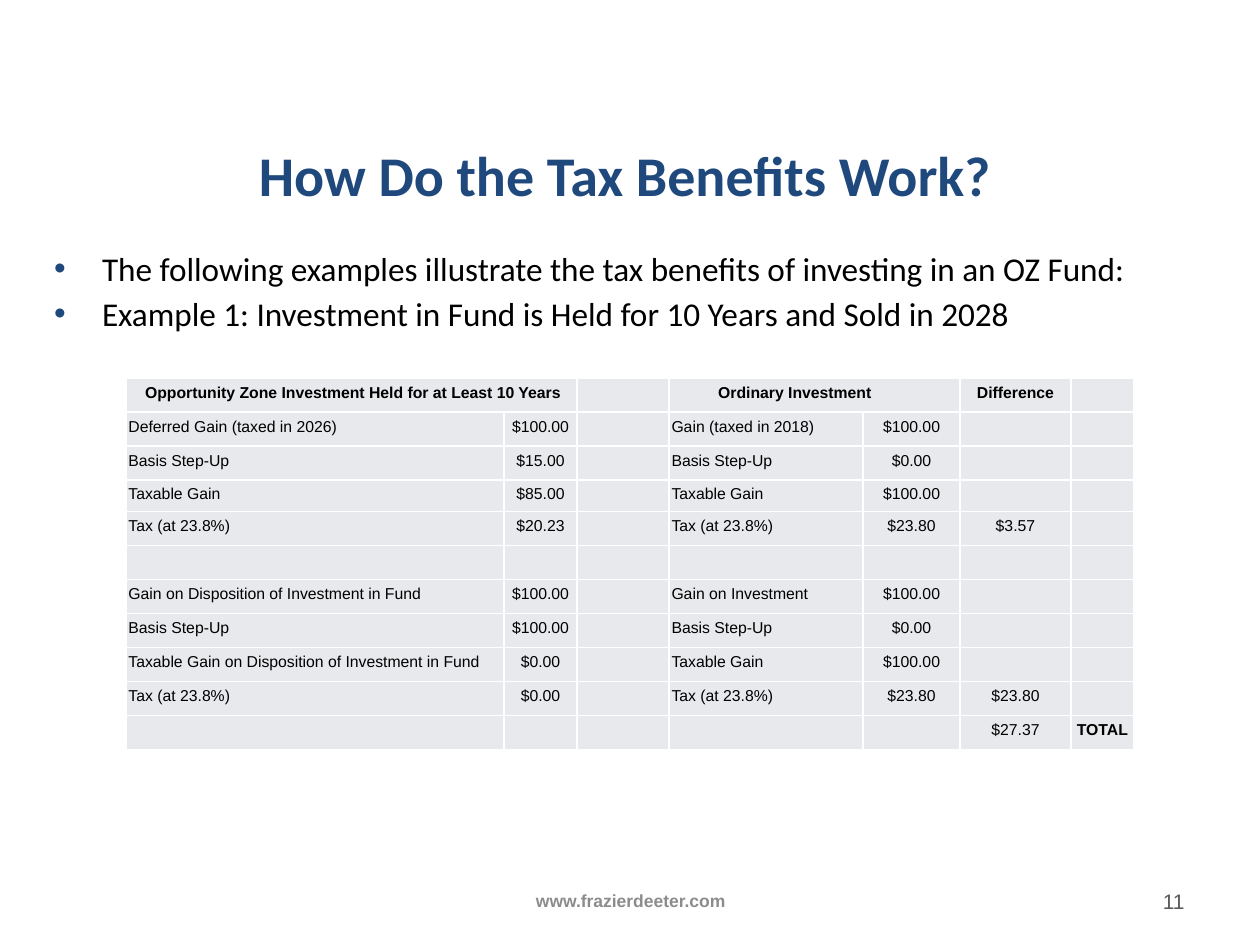
from lxml import etree
from pptx import Presentation
from pptx.dml.color import RGBColor
from pptx.enum.text import MSO_ANCHOR, MSO_AUTO_SIZE, PP_ALIGN
from pptx.oxml.ns import qn
from pptx.util import Inches, Pt

LEFT, CENTER, RIGHT = PP_ALIGN.LEFT, PP_ALIGN.CENTER, PP_ALIGN.RIGHT
MIDDLE, TOP = MSO_ANCHOR.MIDDLE, MSO_ANCHOR.TOP
NO_FIT = MSO_AUTO_SIZE.NONE
COLORS = {"navy": "1F497D", "black": "000000", "footer": "8C8C8C",
          "number": "595959", "cell": "E8E9EC", "border": "FFFFFF"}


def format_paragraph(para, color, align=LEFT, **font_values):
    para.alignment = align
    for name, value in font_values.items():
        setattr(para.font, name, value)
    para.font.color.rgb = RGBColor.from_string(COLORS[color])


def place(box, left, top, width, height, anchor):
    for name, value in zip(("left", "top", "width", "height"), (left, top, width, height)):
        setattr(box, name, Inches(value))
    frame = box.text_frame
    frame.word_wrap = True
    frame.auto_size = NO_FIT
    frame.vertical_anchor = anchor
    return frame


deck = Presentation()
deck.slide_width, deck.slide_height = Inches(10), Inches(7.5)
page = deck.slides.add_slide(deck.slide_layouts[1])

# Title
frame = place(page.shapes.title, 0.5, 0.92, 8.92, 0.92, MIDDLE)
frame.text = "How Do the Tax Benefits Work?"
format_paragraph(frame.paragraphs[0], "navy", CENTER, name="Calibri", size=Pt(32), bold=True)

# Bullet list
frame = place(page.placeholders[1], 0.33, 1.92, 9.5, 4.17, TOP)
frame.text = ("The following examples illustrate the tax benefits of investing in an OZ Fund:\n"
              "Example 1: Investment in Fund is Held for 10 Years and Sold in 2028")
for index, para in enumerate(frame.paragraphs):
    props = para._p.get_or_add_pPr()
    props.set("marL", str(Inches(0.38)))
    props.set("indent", str(-Inches(0.38)))
    bullet_color = etree.SubElement(props, qn("a:buClr"))
    etree.SubElement(bullet_color, qn("a:srgbClr"), val=COLORS["navy"])
    etree.SubElement(props, qn("a:buChar"), char="•")
    para.space_before = Pt(3 * index)
    format_paragraph(para, "black", name="Calibri", size=Pt(19))

# Comparison table: fund investment, ordinary investment, difference
ROWS = [
    ("Opportunity Zone Investment Held for at Least 10 Years", "", "",
     "Ordinary Investment", "", "Difference", ""),
    ("Deferred Gain (taxed in 2026)", "$100.00", "", "Gain (taxed in 2018)", "$100.00", "", ""),
    ("Basis Step-Up", "$15.00", "", "Basis Step-Up", "$0.00", "", ""),
    ("Taxable Gain", "$85.00", "", "Taxable Gain", "$100.00", "", ""),
    ("Tax (at 23.8%)", "$20.23", "", "Tax (at 23.8%)", "$23.80", "$3.57", ""),
    ("", "", "", "", "", "", ""),
    ("Gain on Disposition of Investment in Fund", "$100.00", "",
     "Gain on Investment", "$100.00", "", ""),
    ("Basis Step-Up", "$100.00", "", "Basis Step-Up", "$0.00", "", ""),
    ("Taxable Gain on Disposition of Investment in Fund", "$0.00", "",
     "Taxable Gain", "$100.00", "", ""),
    ("Tax (at 23.8%)", "$0.00", "", "Tax (at 23.8%)", "$23.80", "$23.80", ""),
    ("", "", "", "", "", "$27.37", "TOTAL"),
]
COLUMN_WIDTHS = [3, 0.58, 0.73, 1.54, 0.77, 0.88, 0.5]
LABEL_COLUMNS = (0, 3)
SHORT_ROW = 3

table = page.shapes.add_table(len(ROWS), len(COLUMN_WIDTHS), Inches(1), Inches(3),
                              Inches(8), Inches(2.97)).table
for column, width in zip(table.columns, COLUMN_WIDTHS):
    column.width = Inches(width)
for r, texts in enumerate(ROWS):
    table.rows[r].height = Inches(0.25 if r == SHORT_ROW else 0.27)
    for c, text in enumerate(texts):
        cell = table.cell(r, c)
        cell.text = text
        cell.vertical_anchor = MIDDLE
        for side in ("left", "top", "right", "bottom"):
            setattr(cell, "margin_" + side, 0)
        if c in LABEL_COLUMNS:
            cell.margin_left = Inches(0.39 if (r, c) == (0, 3) else 0.02)
        is_label = c in LABEL_COLUMNS and (r, c) != (0, 0)
        para = cell.text_frame.paragraphs[0]
        para.line_spacing = Pt(7.8)
        format_paragraph(para, "black", LEFT if is_label else CENTER, name="Arial",
                         size=Pt(9), bold=r == 0 or text == "TOTAL")
        cell.fill.solid()
        cell.fill.fore_color.rgb = RGBColor.from_string(COLORS["cell"])
        # Borders come before the fill in the cell properties
        props = cell._tc.get_or_add_tcPr()
        for index, tag in enumerate(("a:lnL", "a:lnR", "a:lnT", "a:lnB")):
            line = etree.Element(qn(tag), w=str(Pt(1)))
            line_fill = etree.SubElement(line, qn("a:solidFill"))
            etree.SubElement(line_fill, qn("a:srgbClr"), val=COLORS["border"])
            props.insert(index, line)
for c in LABEL_COLUMNS:
    table.cell(0, c).merge(table.cell(0, c + 1))

# Footer and page number
FOOTERS = [
    ("www.frazierdeeter.com", 3.42, 3.17, CENTER, "footer", 10, True),
    ("11", 7.17, 2.33, RIGHT, "number", 12, False),
]
for text, left, width, align, color, size, bold in FOOTERS:
    box = page.shapes.add_textbox(0, 0, 0, 0)
    frame = place(box, left, 6.95, width, 0.4, MIDDLE)
    frame.text = text
    format_paragraph(frame.paragraphs[0], color, align, name="Arial", size=Pt(size), bold=bold)

deck.save("out.pptx")
